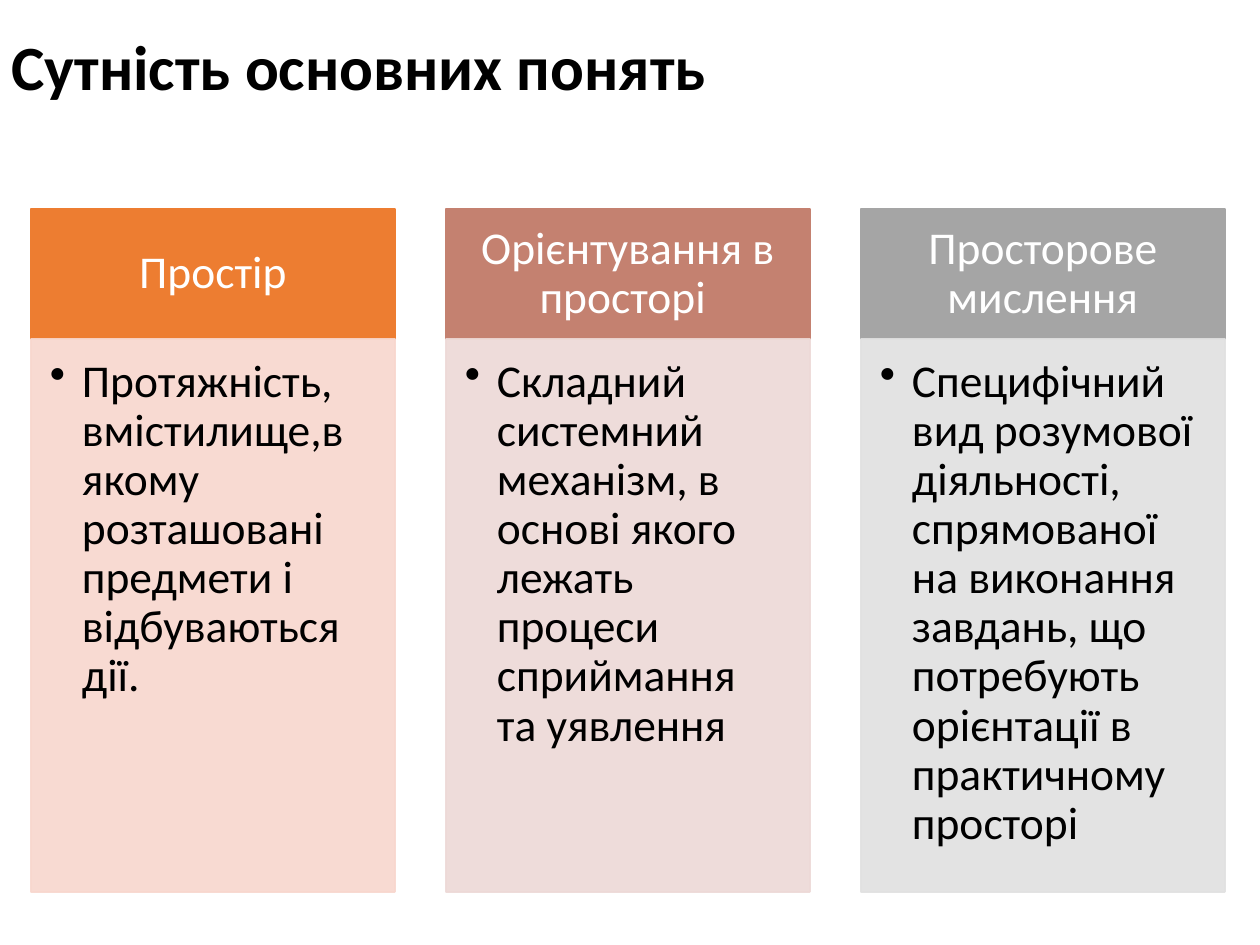
"""Build a slide that defines three spatial concepts in side-by-side columns."""
from dataclasses import dataclass

from lxml import etree
from pptx import Presentation
from pptx import util as u
from pptx.dml.color import RGBColor
from pptx.enum import shapes, text
from pptx.oxml.ns import qn

TITLE = "Сутність основних понять"
CONCEPTS = [
    ("Простір",
     "Протяжність, вмістилище,в якому розташовані предмети і відбуваються дії.",
     "ED7D31", "F8D7CE"),
    ("Орієнтування в просторі ",
     "Складний системний механізм, в основі якого лежать процеси сприймання та уявлення",
     "C48170", "EDD9D7"),
    ("Просторове мислення",
     "Специфічний вид розумової діяльності, спрямованої на виконання завдань, "
     "що потребують орієнтації в практичному просторі",
     "A5A5A5", "E1E1E1"),
]


@dataclass(frozen=True)
class Theme:
    font: str = "Calibri"
    dark: str = "000000"
    light: str = "FFFFFF"
    title_size: int = 36
    text_size: int = 26
    body_opacity: int = 90


THEME = Theme()
SLIDE_SIZE = (1260, 945)
TITLE_BOX = (-184, -21, 1086, 183)
LEFT, TOP, WIDTH, PITCH = 31, 209, 364, 415
HEADER_HEIGHT, BODY_HEIGHT = 130, 553
HEADER_INSETS = (25, 15, 25, 15)
BODY_INSETS = (19, 19, 25, 29)
BULLET_INDENT = 32


def px(value):
    return u.Emu(round(value * 914400 / 126))


def write(shape, content, size, color, anchor, align, bold=False, insets=None, bullet=False):
    frame = shape.text_frame
    frame.word_wrap = True
    frame.vertical_anchor = anchor
    if insets:
        (frame.margin_left, frame.margin_top,
         frame.margin_right, frame.margin_bottom) = map(px, insets)
    paragraph = frame.paragraphs[0]
    paragraph.alignment = align
    paragraph.line_spacing = 0.9
    if bullet:
        properties = paragraph._p.get_or_add_pPr()
        properties.set("marL", str(px(BULLET_INDENT)))
        properties.set("indent", str(-px(BULLET_INDENT)))
        etree.SubElement(properties, qn("a:buChar")).set("char", "•")
    run = paragraph.add_run()
    run.text = content
    run.font.name = THEME.font
    run.font.size = u.Pt(size)
    run.font.bold = bold
    run.font.color.rgb = RGBColor.from_string(color)


def add_panel(slide, box, color, opacity=100):
    shape = slide.shapes.add_shape(shapes.MSO_SHAPE.RECTANGLE, *map(px, box))
    shape.shadow.inherit = False
    shape.line.width = u.Pt(1)
    for fill in (shape.fill, shape.line.fill):
        fill.solid()
        fill.fore_color.rgb = RGBColor.from_string(color)
    if opacity < 100:
        for tone in shape._element.spPr.iter(qn("a:srgbClr")):
            etree.SubElement(tone, qn("a:alpha")).set("val", str(opacity * 1000))
    return shape


def main():
    presentation = Presentation()
    presentation.slide_width, presentation.slide_height = map(px, SLIDE_SIZE)
    slide = presentation.slides.add_slide(presentation.slide_layouts[6])

    title = slide.shapes.add_textbox(*map(px, TITLE_BOX))
    write(title, TITLE, THEME.title_size, THEME.dark,
          text.MSO_ANCHOR.MIDDLE, text.PP_ALIGN.CENTER, bold=True)

    for index, (name, definition, header_color, body_color) in enumerate(CONCEPTS):
        left = LEFT + index * PITCH
        header = add_panel(slide, (left, TOP, WIDTH, HEADER_HEIGHT), header_color)
        write(header, name, THEME.text_size, THEME.light,
              text.MSO_ANCHOR.MIDDLE, text.PP_ALIGN.CENTER, insets=HEADER_INSETS)
        body = add_panel(slide, (left, TOP + HEADER_HEIGHT, WIDTH, BODY_HEIGHT),
                         body_color, THEME.body_opacity)
        write(body, definition, THEME.text_size, THEME.dark,
              text.MSO_ANCHOR.TOP, text.PP_ALIGN.LEFT, insets=BODY_INSETS, bullet=True)

    presentation.save("out.pptx")


if __name__ == "__main__":
    main()
